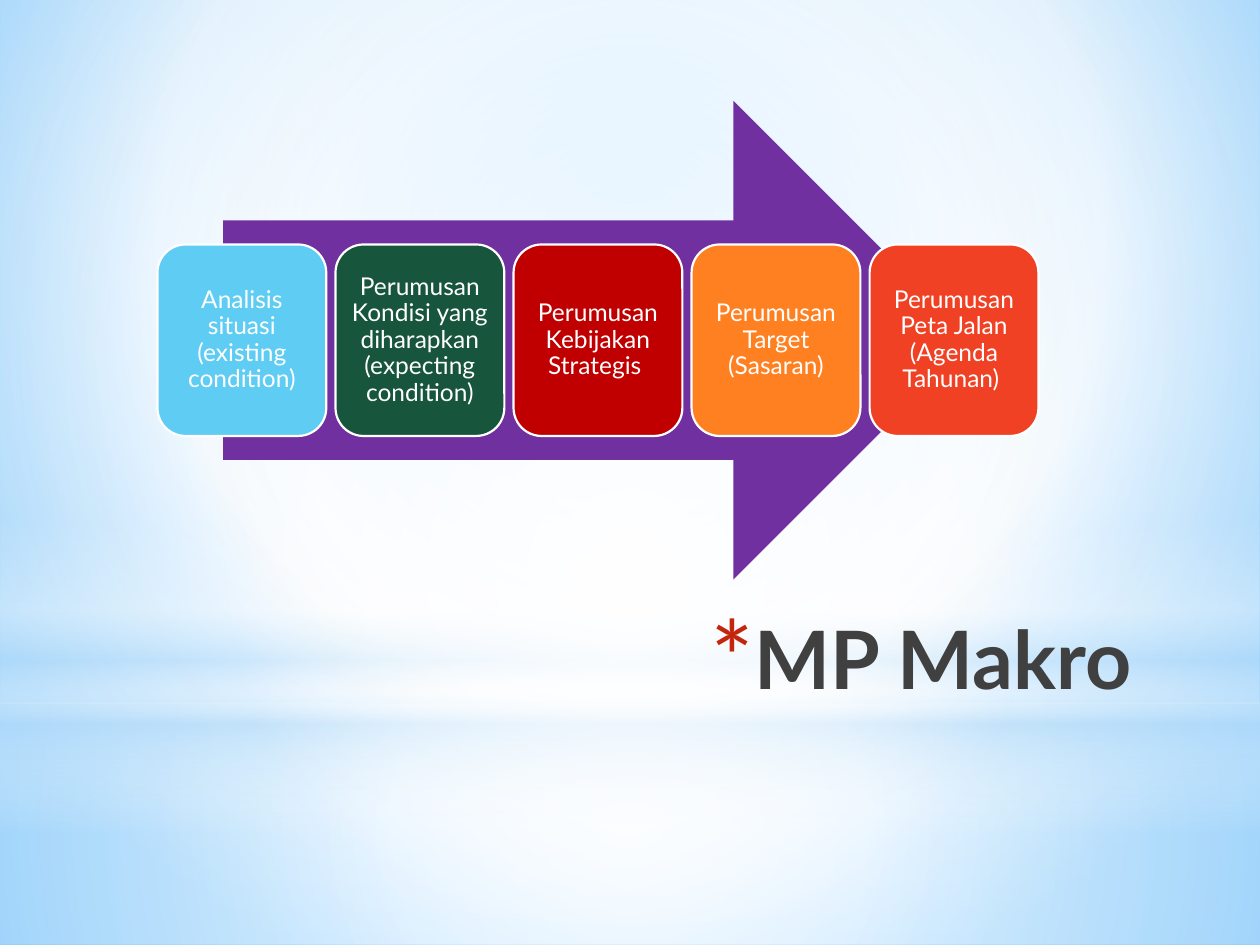
from lxml.etree import SubElement
from pptx import Presentation
from pptx.dml.color import RGBColor
from pptx.enum.shapes import MSO_SHAPE
from pptx.enum.text import MSO_ANCHOR, MSO_AUTO_SIZE, PP_ALIGN
from pptx.oxml import parse_xml
from pptx.oxml.ns import nsdecls, qn
from pptx.util import Inches, Pt

FONT = "Lato"
WIDTH, HEIGHT = 10, 7.5
CENTRE = (50, 50, 50, 50)
STEP_LEFT, STEP_TOP, STEP_PITCH = 1.25, 1.94, 1.413
STEP_WIDTH, STEP_HEIGHT = 1.34, 1.52

STEPS = [
    ("Analisis situasi (existing condition)", "5ECCF3"),
    ("Perumusan Kondisi yang diharapkan (expecting condition)", "17553D"),
    ("Perumusan Kebijakan Strategis ", "C00000"),
    ("Perumusan Target (Sasaran)", "FF8021"),
    ("Perumusan Peta Jalan (Agenda Tahunan) ", "F14124"),
]

# Shape, top, height, stops (position, colour, opacity), focus; None runs downwards
PANELS = [
    (MSO_SHAPE.RECTANGLE, 5.58, 1.92,
     [(0, "FFFFFF", 91), (37, "FFFFFF", 76), (100, "B4DCFA", 79)], CENTRE),
    (MSO_SHAPE.RECTANGLE, 0, 5.58,
     [(0, "FFFFFF", 89), (48, "FFFFFF", 62), (100, "B4DCFA", 79)], CENTRE),
    (MSO_SHAPE.RECTANGLE, 4.12, 2.5,
     [(0, "FFFFFF", 0), (29, "FFFFFF", 30), (45, "B4DCFA", 40),
      (55, "FFFFFF", 26), (65, "B4DCFA", 60), (100, "FFFFFF", 0)], None),
    (MSO_SHAPE.OVAL, 1.75, 5.58,
     [(0, "FFFFFF", 100), (56, "FFFFFF", 0)], CENTRE),
]


def colour(code):
    return RGBColor.from_string(code)


def apply_gradient(fill, properties, stops, focus):
    """Swap the fill inside the properties element for a gradient."""
    fill.solid()
    stop_xml = "".join(
        f'<a:gs pos="{position * 1000}"><a:srgbClr val="{code}">'
        f'<a:alpha val="{opacity * 1000}"/></a:srgbClr></a:gs>'
        for position, code, opacity in stops)
    if focus is None:
        direction = '<a:lin ang="5400000" scaled="0"/>'
    else:
        sides = " ".join(f'{side}="{share * 1000}"' for side, share in zip("ltrb", focus))
        direction = f'<a:path path="circle"><a:fillToRect {sides}/></a:path>'
    gradient = parse_xml(
        f'<a:gradFill {nsdecls("a")} rotWithShape="1">'
        f'<a:gsLst>{stop_xml}</a:gsLst>{direction}</a:gradFill>')
    properties.replace(properties.find(qn("a:solidFill")), gradient)


def add_box(shapes, kind, left, top, width, height):
    box = shapes.add_shape(kind, Inches(left), Inches(top), Inches(width), Inches(height))
    box.shadow.inherit = False
    box.line.fill.background()
    return box


def add_backdrop(page):
    fill = page.background.fill
    fill.solid()
    apply_gradient(fill, page.element.find(f'.//{qn("p:bgPr")}'),
                   [(0, "9ED5FF", 100), (60, "FFFFFF", 100), (100, "5BB9FF", 100)],
                   (20, 10, 20, 60))
    for kind, top, height, stops, focus in PANELS:
        panel = add_box(page.shapes, kind, 0, top, WIDTH, height)
        apply_gradient(panel.fill, panel.element.spPr, stops, focus)
        page.shapes.title.element.addprevious(panel.element)


def format_text(para, size, code, align, bold=False):
    para.alignment = align
    for span in para.runs:
        span.font.name = FONT
        span.font.size = Pt(size)
        span.font.bold = bold
        span.font.color.rgb = colour(code)


def add_star_bullet(para):
    properties = para._p.get_or_add_pPr()
    properties.set("marL", str(Inches(0.35)))
    properties.set("indent", str(-Inches(0.35)))
    bullet_colour = SubElement(properties, qn("a:buClr"))
    SubElement(bullet_colour, qn("a:srgbClr"), val="C3260C")
    SubElement(properties, qn("a:buSzPct"), val="128000")
    SubElement(properties, qn("a:buFont"), typeface=FONT)
    SubElement(properties, qn("a:buChar"), char="*")


def format_title(title):
    title.left, title.top = Inches(1.96), Inches(4.78)
    title.width, title.height = Inches(7.12), Inches(1.25)
    frame = title.text_frame
    frame.text = "MP Makro"
    frame.auto_size = MSO_AUTO_SIZE.NONE
    frame.vertical_anchor = MSO_ANCHOR.TOP
    para = frame.paragraphs[0]
    format_text(para, 46, "404040", PP_ALIGN.RIGHT, bold=True)
    add_star_bullet(para)


def add_step(shapes, column, text, code):
    left = STEP_LEFT + column * STEP_PITCH
    box = add_box(shapes, MSO_SHAPE.ROUNDED_RECTANGLE, left, STEP_TOP, STEP_WIDTH, STEP_HEIGHT)
    box.fill.solid()
    box.fill.fore_color.rgb = colour(code)
    box.line.color.rgb = colour("FFFFFF")
    box.line.width = Pt(1.25)
    frame = box.text_frame
    frame.text = text
    frame.word_wrap = True
    frame.vertical_anchor = MSO_ANCHOR.MIDDLE
    frame.margin_left = frame.margin_right = Inches(0.06)
    frame.margin_top = frame.margin_bottom = Inches(0.06)
    para = frame.paragraphs[0]
    para.line_spacing = 0.9
    format_text(para, 14, "FFFFFF", PP_ALIGN.CENTER)


def add_process(page):
    shapes = page.shapes.add_group_shape().shapes
    arrow = add_box(shapes, MSO_SHAPE.RIGHT_ARROW, 1.77, 0.8, 5.95, 3.8)
    arrow.fill.solid()
    arrow.fill.fore_color.rgb = colour("7030A0")
    for column, (text, code) in enumerate(STEPS):
        add_step(shapes, column, text, code)


def main():
    deck = Presentation()
    deck.slide_width, deck.slide_height = Inches(WIDTH), Inches(HEIGHT)
    page = deck.slides.add_slide(deck.slide_layouts[5])
    add_backdrop(page)
    format_title(page.shapes.title)
    add_process(page)
    deck.save("out.pptx")


if __name__ == "__main__":
    main()
